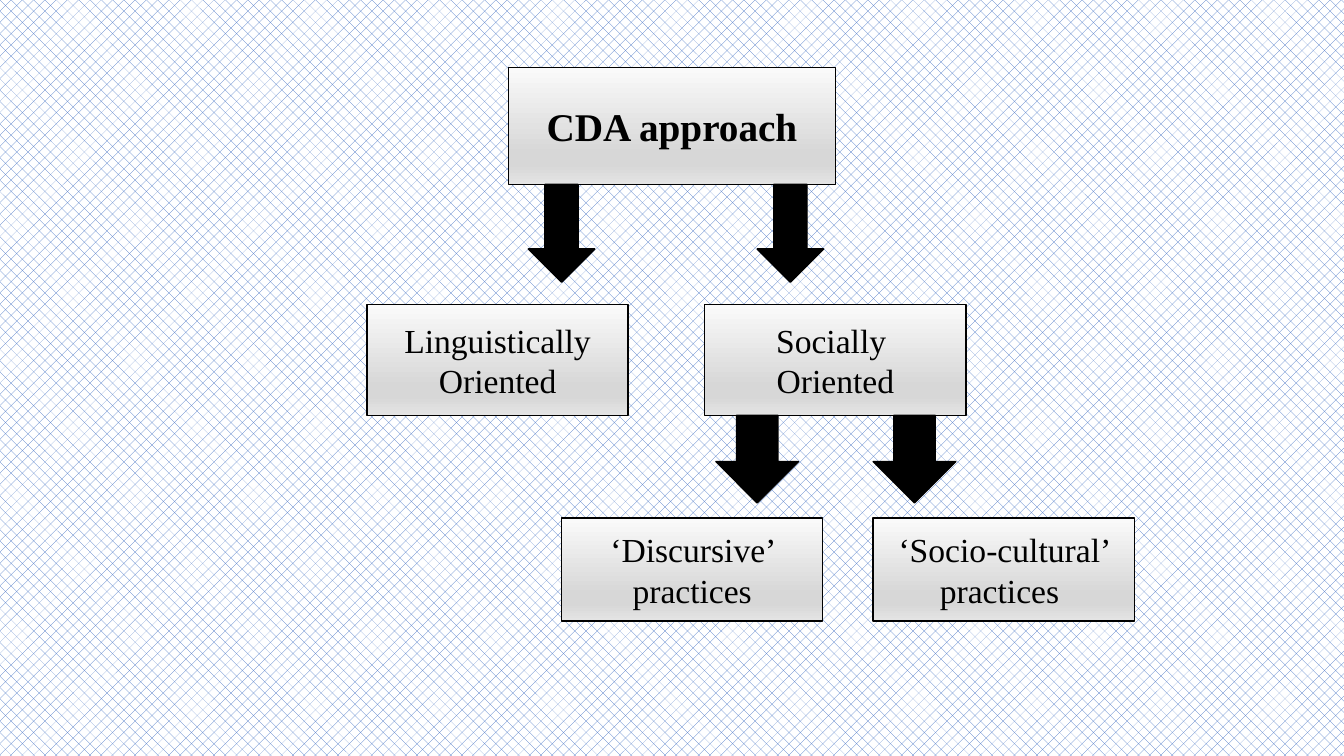
import pptx
import pptx.util
import pptx.dml.color
import pptx.enum.dml
import pptx.enum.shapes
import pptx.enum.text
import pptx.oxml.ns
import lxml.etree

RGB = pptx.dml.color.RGBColor
SHAPE = pptx.enum.shapes.MSO_SHAPE

BLACK = RGB(0x00, 0x00, 0x00)
WHITE = RGB(0xFF, 0xFF, 0xFF)
BLUE = RGB(0x44, 0x72, 0xC4)
PALE = RGB(0xFA, 0xFA, 0xFA)
GREY = RGB(0xD7, 0xD7, 0xD7)
SOFT = RGB(0xE4, 0xE4, 0xE4)
STOPS = [(0, PALE), (74, GREY), (83, GREY), (100, SOFT)]

FONT = "Times New Roman"
WIDE, HIGH = 13.33, 7.5

# Rows of the tree: top and height of each level
ROOT = (0.67, 1.16)
MID = (3.02, 1.1)
LEAF = (5.14, 1.02)
ROOT_W, NODE_W = 3.24, 2.59


def add_shape(slide, kind, left, top, width, height):
    """Add a black-edged shape without shadow."""
    box = [pptx.util.Inches(n) for n in (left, top, width, height)]
    shape = slide.shapes.add_shape(kind, *box)
    shape.shadow.inherit = False
    shape.line.color.rgb = BLACK
    shape.line.width = pptx.util.Pt(1)
    return shape


def shade(shape):
    """Fill from top to bottom with the grey stops."""
    qn = pptx.oxml.ns.qn
    shape.fill.gradient()
    shape.fill.gradient_angle = 270
    stops = shape.element.spPr.find(qn("a:gradFill")).find(qn("a:gsLst"))
    for old in list(stops):
        stops.remove(old)
    for pos, tone in STOPS:
        stop = lxml.etree.SubElement(stops, qn("a:gs"), pos=str(pos * 1000))
        lxml.etree.SubElement(stop, qn("a:srgbClr"), val=str(tone))


def add_node(slide, lines, left, row, width=NODE_W, size=24, bold=False):
    """Add a labelled box on one level of the tree."""
    top, height = row
    node = add_shape(slide, SHAPE.RECTANGLE, left, top, width, height)
    shade(node)
    frame = node.text_frame
    frame.word_wrap = True
    frame.vertical_anchor = pptx.enum.text.MSO_ANCHOR.MIDDLE
    para = frame.paragraphs[0]
    para.alignment = pptx.enum.text.PP_ALIGN.CENTER
    for i, line in enumerate(lines):
        if i:
            para.add_line_break()
        run = para.add_run()
        run.text = line
        run.font.name = FONT
        run.font.size = pptx.util.Pt(size)
        run.font.bold = bold
        run.font.color.rgb = BLACK


def add_arrow(slide, left, row, width, height):
    """Hang a black arrow from the foot of a level."""
    arrow = add_shape(slide, SHAPE.DOWN_ARROW, left, sum(row), width, height)
    arrow.fill.solid()
    arrow.fill.fore_color.rgb = BLACK


def set_back(slide):
    """Give the slide its blue dotted pattern."""
    fill = slide.background.fill
    fill.patterned()
    fill.pattern = pptx.enum.dml.MSO_PATTERN.PERCENT_25
    fill.fore_color.rgb = BLUE
    fill.back_color.rgb = WHITE


def main():
    deck = pptx.Presentation()
    deck.slide_width = pptx.util.Inches(WIDE)
    deck.slide_height = pptx.util.Inches(HIGH)
    slide = deck.slides.add_slide(deck.slide_layouts[6])
    set_back(slide)

    # Boxes, level by level
    add_node(slide, ["CDA approach"], (WIDE - ROOT_W) / 2, ROOT,
             ROOT_W, 28, True)
    add_node(slide, ["Linguistically Oriented"], 3.64, MID)
    add_node(slide, ["Socially ", "Oriented"], 6.99, MID)
    add_node(slide, ["‘Discursive’ practices"], 5.57, LEAF)
    add_node(slide, ["‘Socio-cultural’ practices "], 8.66, LEAF)

    # Arrows between the levels
    for left in (5.24, 7.51):
        add_arrow(slide, left, ROOT, 0.66, 0.97)
    for left in (7.1, 8.66):
        add_arrow(slide, left, MID, 0.82, 0.87)

    deck.save("out.pptx")


if __name__ == "__main__":
    main()
